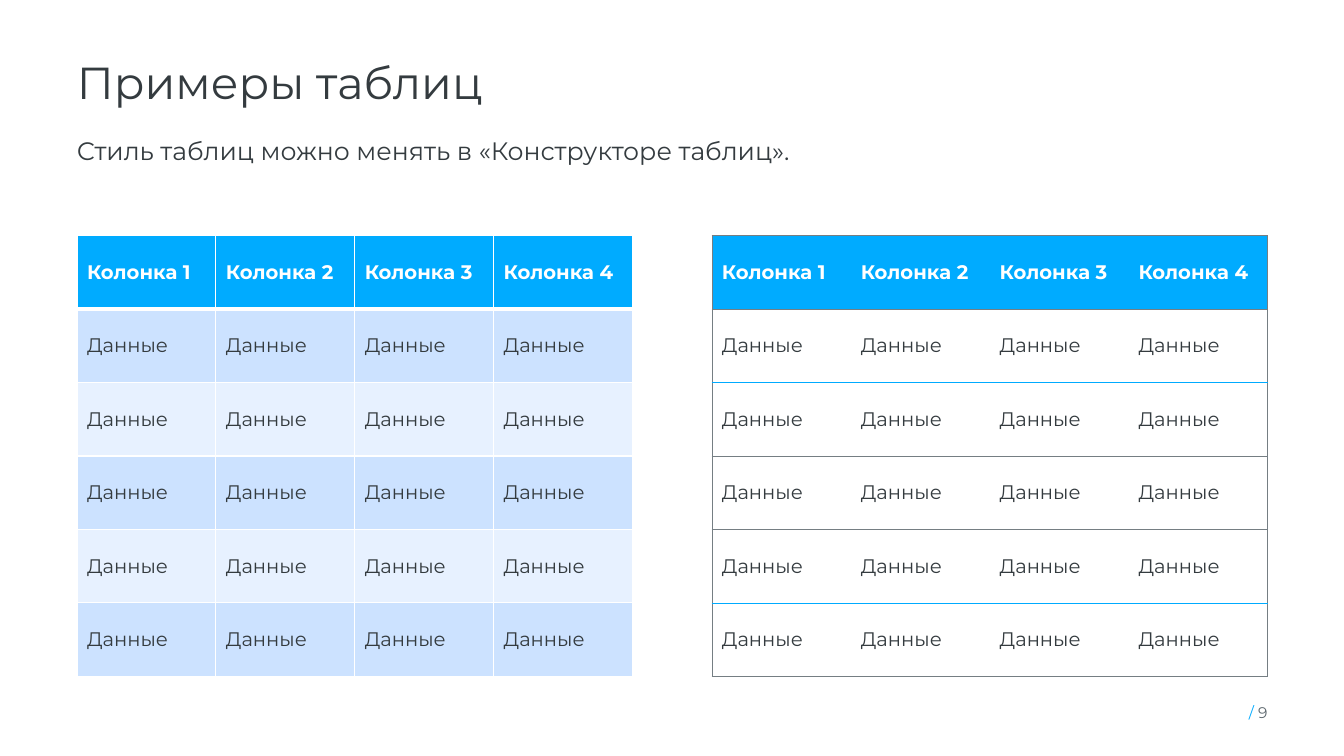
"""Build a slide with two sample tables."""
from lxml.etree import SubElement
from pptx import Presentation
from pptx.dml.color import RGBColor
from pptx.enum.text import MSO_ANCHOR, PP_ALIGN
from pptx.oxml.ns import qn
from pptx.util import Cm, Pt

HUES = {"blue": "00ABFF", "dark": "343B3F", "gray": "5D686E", "line": "757E83",
        "white": "FFFFFF", "band": "CCE2FF", "pale": "E7F1FF"}
LEFT, WIDE = 1.94, 30
ROWS, COLS = 6, 4


def style(para, size, hue, bold=False):
    for run in para.runs:
        font = run.font
        font.name, font.size, font.bold = "Montserrat", Pt(size), bold
        font.color.rgb = RGBColor.from_string(HUES[hue])


def edge(cell, side, hue, width):
    line = SubElement(cell._tc.get_or_add_tcPr(), qn(f"a:ln{side}"), w=str(Pt(width)))
    if hue:
        fill = SubElement(line, qn("a:solidFill"))
        SubElement(fill, qn("a:srgbClr"), val=HUES[hue])
    else:
        SubElement(line, qn("a:noFill"))


deck = Presentation()
deck.slide_width, deck.slide_height = Cm(33.87), Cm(19.05)
slide = deck.slides.add_slide(deck.slide_layouts[5])

title = slide.shapes.title
title.left, title.top, title.width, title.height = Cm(LEFT), Cm(1.52), Cm(WIDE), Cm(2.54)
intro = slide.shapes.add_textbox(Cm(LEFT), Cm(3.4), Cm(WIDE), Cm(2.54))
number = slide.shapes.add_textbox(Cm(30.14), Cm(17.63), Cm(1.8), Cm(0.64))

texts = [
    (title, "Примеры таблиц", 32, "dark", PP_ALIGN.LEFT, MSO_ANCHOR.TOP),
    (intro, "Стиль таблиц можно менять в «Конструкторе таблиц».", 18, "dark",
     PP_ALIGN.LEFT, MSO_ANCHOR.TOP),
    (number, "/ ", 11, "blue", PP_ALIGN.RIGHT, MSO_ANCHOR.MIDDLE),
]
for box, words, size, hue, align, anchor in texts:
    frame = box.text_frame
    frame.text = words
    frame.word_wrap = True
    frame.margin_left = frame.margin_right = frame.margin_top = frame.margin_bottom = 0
    frame.vertical_anchor = anchor
    para = frame.paragraphs[0]
    para.alignment = align
    style(para, size, hue)
title.text_frame.paragraphs[0].line_spacing = 0.9
intro.text_frame.paragraphs[0].space_after = Pt(12)

page = number.text_frame.paragraphs[0]
digit = page.add_run()
digit.text = "9"
digit.font.name, digit.font.size = "Montserrat", Pt(11)
digit.font.color.rgb = RGBColor.from_string(HUES["gray"])

rules = ["line", "line", "blue", "line", "line", "blue", "line"]
for left, banded in [(LEFT, True), (17.94, False)]:
    table = slide.shapes.add_table(ROWS, COLS, Cm(left), Cm(5.94), Cm(14), Cm(11.1)).table
    table.horz_banding = False
    for col in table.columns:
        col.width = Cm(3.5)
    for r, row in enumerate(table.rows):
        row.height = Cm(1.85)
        for c, cell in enumerate(row.cells):
            if banded:
                sides = {"L": "white", "R": "white", "T": "white", "B": "white"}
            else:
                sides = {"L": "line" if c == 0 else None,
                         "R": "line" if c == COLS - 1 else None,
                         "T": rules[r], "B": rules[r + 1]}
            for side, hue in sides.items():
                thick = (r, side) in [(0, "B"), (1, "T")]
                edge(cell, side, hue, (3 if thick else 1) if banded else 0.5)
            if r == 0 or banded:
                tint = "blue" if r == 0 else "band" if r % 2 else "pale"
                cell.fill.solid()
                cell.fill.fore_color.rgb = RGBColor.from_string(HUES[tint])
            else:
                cell.fill.background()
            cell.vertical_anchor = MSO_ANCHOR.MIDDLE
            cell.text_frame.text = "Данные" if r else f"Колонка {c + 1}"
            style(cell.text_frame.paragraphs[0], 14, "dark" if r else "white", r == 0)

deck.save("out.pptx")
